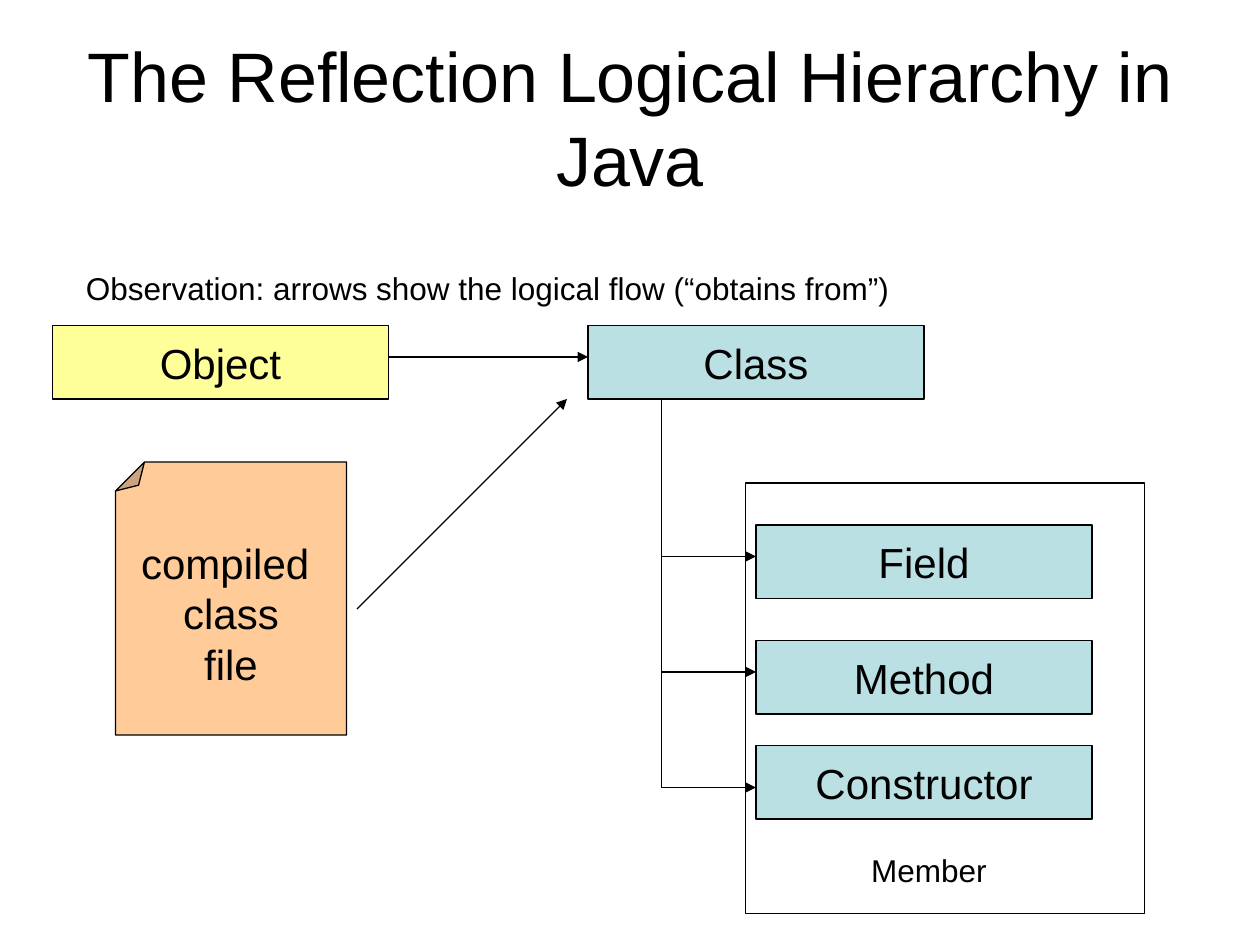
from lxml.etree import SubElement
from pptx import Presentation
from pptx.dml.color import RGBColor
from pptx.enum.shapes import MSO_CONNECTOR as CONNECTOR, MSO_SHAPE as SHAPE
from pptx.enum.text import MSO_ANCHOR as ANCHOR, MSO_AUTO_SIZE as AUTO_SIZE, PP_ALIGN as ALIGN
from pptx.oxml.ns import qn
from pptx.util import Inches, Pt

COLORS = {"ink": "000000", "type": "BBE0E3", "object": "FFFF99", "file": "FFCC99"}
FONT = "Arial"
UNIT = Inches(1) / 12  # the slide is a grid of 120 columns by 90 rows
NODE_COLS, NODE_ROWS = 32, 7


def grid(*cells):
    return [round(cell * UNIT) for cell in cells]


def color(key):
    return RGBColor.from_string(COLORS[key])


def write(frame, lines, size, align, wrap=False, anchor=ANCHOR.MIDDLE):
    frame.word_wrap = wrap
    frame.vertical_anchor = anchor
    for index, line in enumerate(lines):
        paragraph = frame.add_paragraph() if index else frame.paragraphs[0]
        paragraph.alignment = align
        run = paragraph.add_run()
        run.text = line
        run.font.name, run.font.size = FONT, Pt(size)
        run.font.color.rgb = color("ink")


def add_box(slide, box, fill=None, lines=(), kind=SHAPE.RECTANGLE):
    shape = slide.shapes.add_shape(kind, *grid(*box))
    shape.shadow.inherit = False
    if fill:
        shape.fill.solid()
        shape.fill.fore_color.rgb = color(fill)
    else:
        shape.fill.background()
    shape.line.color.rgb = color("ink")
    shape.line.width = Pt(0.75)
    write(shape.text_frame, lines, 24, ALIGN.CENTER)
    return shape


def add_node(slide, col, row, label, fill="type"):
    add_box(slide, (col, row, NODE_COLS, NODE_ROWS), fill, [label])


def add_line(slide, start, end, width=0.75, arrow=True):
    line = slide.shapes.add_connector(CONNECTOR.STRAIGHT, *grid(*start, *end))
    line.line.color.rgb = color("ink")
    line.line.width = Pt(width)
    properties = line._element.spPr
    if arrow:
        SubElement(properties.find(qn("a:ln")), qn("a:tailEnd"), type="triangle")
    SubElement(properties, qn("a:effectLst"))


def add_caption(slide, box, text):
    caption = slide.shapes.add_textbox(*grid(*box)).text_frame
    write(caption, [text], 18, ALIGN.LEFT, anchor=ANCHOR.TOP)
    caption.auto_size = AUTO_SIZE.SHAPE_TO_FIT_TEXT


def add_title(slide, box, text):
    title = slide.shapes.add_textbox(*grid(*box)).text_frame
    write(title, [text], 40, ALIGN.CENTER, wrap=True)


def add_sources(slide, box):
    """Object and Class side by side, with the arrow between them."""
    left, top, cols, _ = box
    class_col = left + cols - NODE_COLS
    add_node(slide, class_col, top, "Class")
    add_node(slide, left, top, "Object", "object")
    add_line(slide, (left + NODE_COLS, top + 3), (class_col, top + 3))


def add_class_file(slide, box, class_corner):
    """Sheet turned upside down, so the fold is at its top left."""
    left, top, cols, _ = box
    sheet = add_box(slide, box, "file", ["compiled ", "class", "file"], SHAPE.FOLDED_CORNER)
    fold = sheet._element.spPr.find(qn("a:prstGeom")).find(qn("a:avLst"))
    SubElement(fold, qn("a:gd"), name="adj", fmla="val 12500")
    sheet.rotation = 180
    sheet.text_frame._txBody.bodyPr.set("rot", "10800000")
    add_line(slide, (left + cols + 1, top + 14), class_corner)


def add_members(slide, box, trunk_start):
    """Frame of member kinds, each reached by a branch of the trunk."""
    left, top, _, _ = box
    trunk_col, trunk_row = trunk_start
    node_col = left + 1
    members = [("Field", 4, 7), ("Method", 15, 18), ("Constructor", 25, 29)]
    add_box(slide, box)
    for label, node_row, _ in members:
        add_node(slide, node_col, top + node_row, label)
    add_line(slide, trunk_start, (trunk_col, top + members[-1][2]), arrow=False)
    for _, _, branch_row in members:
        row = top + branch_row
        add_line(slide, (trunk_col, row), (node_col, row), width=1)
    add_caption(slide, (left + 10.8, top + 34.5, 13.5, 4.8), "Member")


def main():
    deck = Presentation()
    deck.slide_width, deck.slide_height = grid(120, 90)
    slide = deck.slides.add_slide(deck.slide_layouts[6])
    add_title(slide, (6, 3.6, 108, 15), "The Reflection Logical Hierarchy in Java")
    add_members(slide, (71, 46, 38, 41), trunk_start=(63, 38))
    add_sources(slide, (5, 31, 83, NODE_ROWS))
    add_class_file(slide, (11, 44, 22, 26), class_corner=(54, 38))
    add_caption(slide, (7, 25, 79.7, 4.8),
                "Observation: arrows show the logical flow (“obtains from”)")
    deck.save("out.pptx")


if __name__ == "__main__":
    main()
